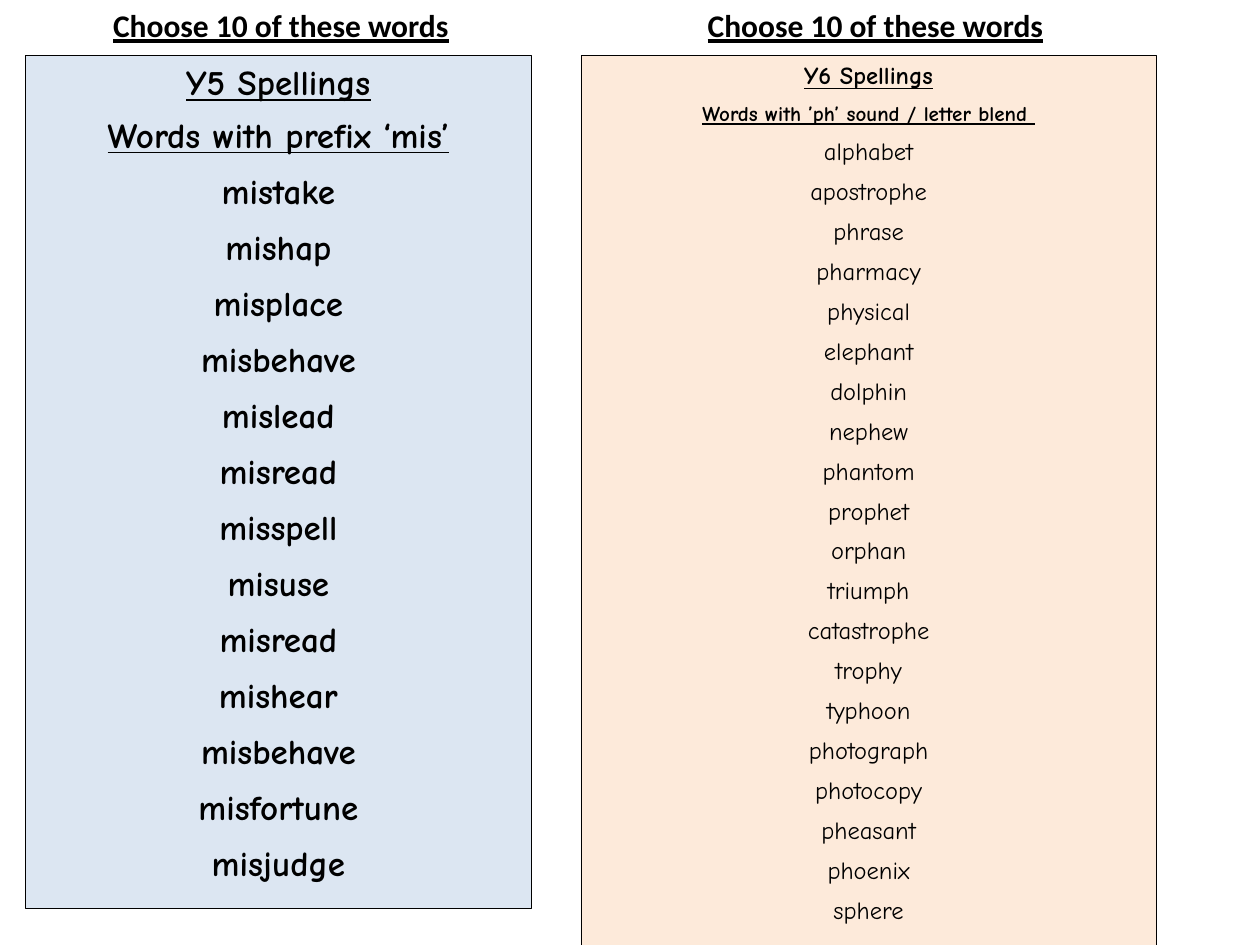
import pptx
import pptx.dml.color
import pptx.enum.shapes
import pptx.enum.text
import pptx.util

Pt = pptx.util.Pt
INK = "000000"
HEADING = {"name": "Calibri", "size": Pt(18), "bold": True, "underline": True}

Y5_WORDS = [
    "mistake", "mishap", "misplace", "misbehave", "mislead", "misread",
    "misspell", "misuse", "misread", "mishear", "misbehave", "misfortune",
    "misjudge",
]
Y6_WORDS = [
    "alphabet", "apostrophe", "phrase", "pharmacy", "physical", "elephant",
    "dolphin", "nephew", "phantom", "prophet", "orphan", "triumph",
    "catastrophe", "trophy", "typhoon", "photograph", "photocopy", "pheasant",
    "phoenix", "sphere",
]


def color(hex_string):
    return pptx.dml.color.RGBColor.from_string(hex_string)


def word_format(size, bold=True, underline=False):
    return {"name": "Comic Neue", "size": Pt(size), "bold": bold, "underline": underline}


def write_paragraphs(frame, lines):
    """Write centred lines given as (text, font format, space after)."""
    for index, (text, font_format, space_after) in enumerate(lines):
        para = frame.add_paragraph() if index else frame.paragraphs[0]
        para.alignment = pptx.enum.text.PP_ALIGN.CENTER
        para.space_after = Pt(space_after)
        span = para.add_run()
        span.text = text
        for name, value in font_format.items():
            setattr(span.font, name, value)
        span.font.color.rgb = color(INK)


def add_heading(page, left, text):
    box = page.shapes.add_textbox(Pt(left), Pt(0), Pt(292.3), Pt(29))
    box.text_frame.word_wrap = True
    box.text_frame.auto_size = pptx.enum.text.MSO_AUTO_SIZE.SHAPE_TO_FIT_TEXT
    write_paragraphs(box.text_frame, [(text, HEADING, 0)])


def add_word_panel(page, left, width, height, fill, lines):
    panel = page.shapes.add_shape(
        pptx.enum.shapes.MSO_SHAPE.RECTANGLE, Pt(left), Pt(31.7), Pt(width), Pt(height))
    panel.shadow.inherit = False
    panel.fill.solid()
    panel.fill.fore_color.rgb = color(fill)
    panel.line.color.rgb = color(INK)
    panel.line.width = Pt(0.25)
    frame = panel.text_frame
    frame.word_wrap = True
    frame.vertical_anchor = pptx.enum.text.MSO_ANCHOR.TOP
    for side in ("left", "top", "right", "bottom"):
        setattr(frame, f"margin_{side}", Pt(2.88))
    write_paragraphs(frame, lines)


def main():
    deck = pptx.Presentation()
    deck.slide_width, deck.slide_height = Pt(720), Pt(540)
    page = deck.slides.add_slide(deck.slide_layouts[6])

    # Year 5 list
    y5_lines = [
        ("Y5 Spellings", word_format(20, underline=True), 6),
        ("Words with prefix ‘mis’", word_format(20, underline=True), 8),
    ] + [(word, word_format(20), 8) for word in Y5_WORDS]
    add_word_panel(page, 14.4, 289.4, 487.5, "DCE6F2", y5_lines)
    add_heading(page, 14.4, "Choose 10 of these words")

    # Year 6 list
    y6_lines = [
        ("Y6 Spellings", word_format(14, underline=True), 6),
        ("Words with ’ph’ sound / letter blend ", word_format(12, underline=True), 6),
    ] + [(word, word_format(14, bold=False), 6) for word in Y6_WORDS]
    add_word_panel(page, 331.9, 329, 508.3, "FDEADA", y6_lines)
    add_heading(page, 354.2, "Choose 10 of these words")

    deck.save("out.pptx")


if __name__ == "__main__":
    main()
